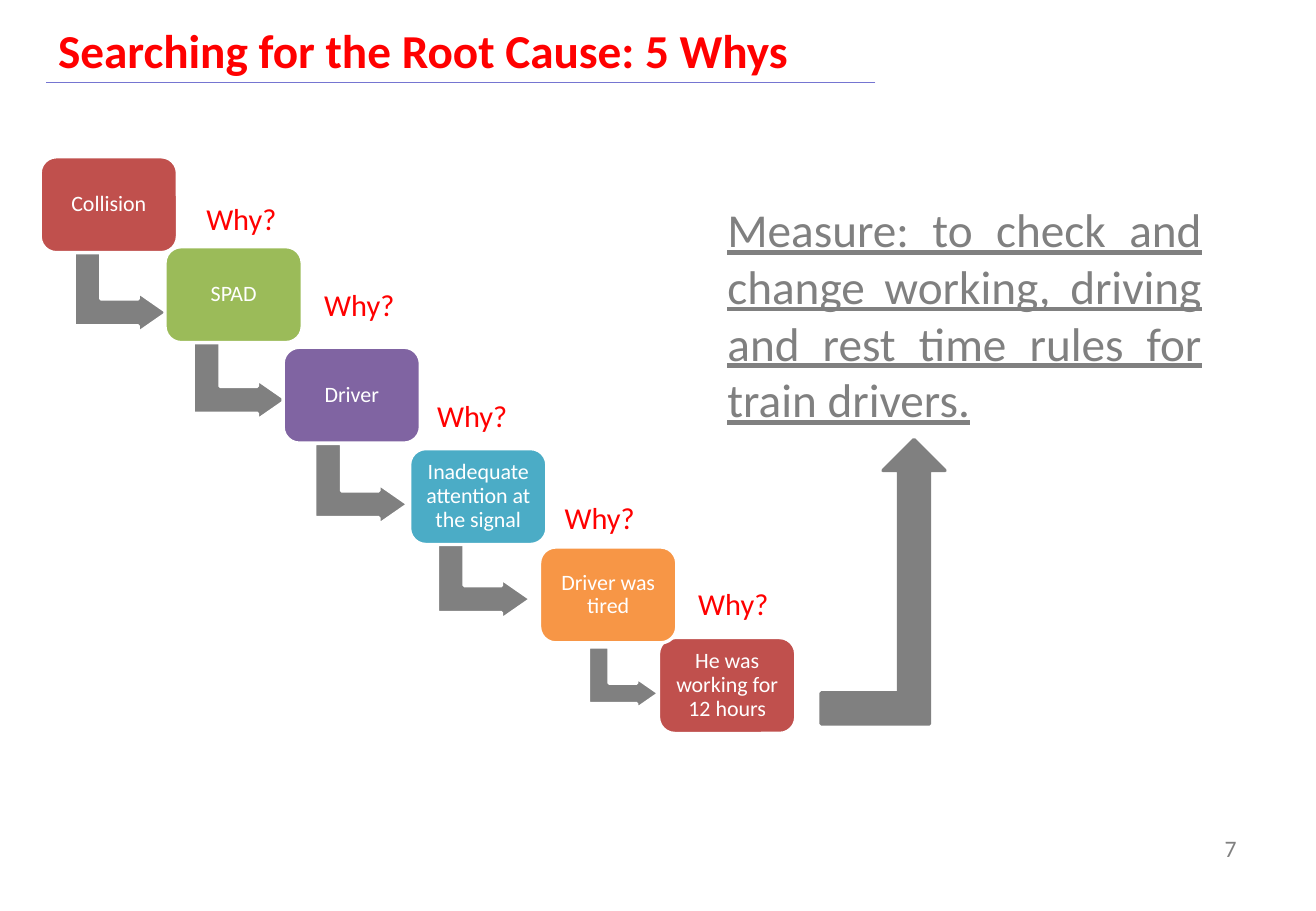
from typing import NamedTuple

from lxml.etree import SubElement
from pptx import Presentation
from pptx.dml.color import RGBColor
from pptx.enum.shapes import MSO_CONNECTOR, MSO_SHAPE
from pptx.enum.text import MSO_ANCHOR, MSO_AUTO_SIZE, PP_ALIGN
from pptx.oxml.ns import qn
from pptx.util import Pt

RED = RGBColor(0xFF, 0x00, 0x00)
GREY = RGBColor(0x80, 0x80, 0x80)
WHITE = RGBColor(0xFF, 0xFF, 0xFF)
RULE = RGBColor(0x75, 0x75, 0xD1)
BRICK = RGBColor(0xC0, 0x50, 0x4D)
GREEN = RGBColor(0x9B, 0xBB, 0x59)
PURPLE = RGBColor(0x80, 0x64, 0xA2)
TEAL = RGBColor(0x4B, 0xAC, 0xC6)
ORANGE = RGBColor(0xF7, 0x96, 0x46)

FONT = "Calibri"
STEP_W, STEP_H = 81.4, 56.9
BEND = (0.33, 0.25, 0.36)


class Box(NamedTuple):
    x: float
    y: float
    w: float
    h: float

    def inner(self, dx, dy, w, h):
        return Box(self.x + dx, self.y + dy, w, h)

    def points(self):
        return [Pt(n) for n in self]


STEPS = [
    ("Collision", BRICK, 0, 0),
    ("SPAD", GREEN, 74, 53.3),
    ("Driver", PURPLE, 144, 112.9),
    ("Inadequate attention at the signal", TEAL, 219, 173),
    ("He was working for 12 hours", BRICK, 366.5, 285),
    ("Driver was tired", ORANGE, 296, 231.3),
]
BENDS = [
    (23.7, 52.6, 48.2, 55.4),
    (94.3, 104.4, 48.2, 55.4),
    (166.3, 166.3, 48.2, 55.4),
    (239, 222.5, 48.2, 55.4),
    (327.6, 288, 36.7, 41.8),
]
WHYS = [(91.4, 22.3), (161.3, 73.4), (228.2, 139), (303.8, 199.4), (383, 250.6)]


def style(para, size, color, align=PP_ALIGN.LEFT):
    para.alignment = align
    font = para.font
    font.name = FONT
    font.size = Pt(size)
    font.color.rgb = color
    return font


def label(slide, box, text, size, color, align=PP_ALIGN.LEFT, grow=False):
    frame = slide.shapes.add_textbox(*box.points()).text_frame
    frame.word_wrap = True
    if grow:
        frame.auto_size = MSO_AUTO_SIZE.SHAPE_TO_FIT_TEXT
    frame.text = text
    return frame, style(frame.paragraphs[0], size, color, align)


def block(slide, kind, box, fill, edge, adjust=()):
    shape = slide.shapes.add_shape(kind, *box.points())
    shape.shadow.inherit = False
    shape.fill.solid()
    shape.fill.fore_color.rgb = fill
    shape.line.color.rgb = edge
    shape.line.width = Pt(2)
    for i, value in enumerate(adjust):
        shape.adjustments[i] = value
    return shape


def header(slide, box):
    frame, font = label(slide, box, "Searching for the Root Cause: 5 Whys", 28, RED)
    frame.vertical_anchor = MSO_ANCHOR.MIDDLE
    font.bold = True
    base = box.y + box.h
    line = slide.shapes.add_connector(
        MSO_CONNECTOR.STRAIGHT, Pt(box.x + box.w), Pt(base), Pt(box.x), Pt(base))
    line.line.color.rgb = RULE
    line.line.width = Pt(0.75)
    SubElement(line._element.spPr, qn("a:effectLst"))


def step(slide, box, text, fill):
    shape = block(slide, MSO_SHAPE.ROUNDED_RECTANGLE, box, fill, WHITE, (0.17,))
    frame = shape.text_frame
    frame.word_wrap = True
    frame.vertical_anchor = MSO_ANCHOR.MIDDLE
    frame.margin_left = frame.margin_right = Pt(3.6)
    frame.margin_top = frame.margin_bottom = Pt(3.6)
    frame.text = text
    para = frame.paragraphs[0]
    para.line_spacing = 0.9
    style(para, 13, WHITE, PP_ALIGN.CENTER)


def stairs(slide, box):
    for bend in BENDS:
        arrow = block(slide, MSO_SHAPE.BENT_UP_ARROW, box.inner(*bend), GREY, WHITE, BEND)
        arrow.rotation = 90
    for text, fill, dx, dy in STEPS:
        step(slide, box.inner(dx, dy, STEP_W, STEP_H), text, fill)
    for dx, dy in WHYS:
        label(slide, box.inner(dx, dy, 62.6, 28.8), "Why?", 18, RED, grow=True)


def measure(slide, box):
    text = ("Measure: to check and change working, driving and rest time "
            "rules for train drivers.")
    font = label(slide, box.inner(0, 0, box.w, 165), text, 28, GREY,
                 PP_ALIGN.JUSTIFY, grow=True)[1]
    font.underline = True
    block(slide, MSO_SHAPE.BENT_UP_ARROW,
          box.inner(62.6, 145.4, 73.4, box.h - 145.4), GREY, GREY)


def footer(slide, box):
    label(slide, box, "7", 14, GREY, PP_ALIGN.RIGHT)


def main():
    deck = Presentation()
    deck.slide_width, deck.slide_height = Pt(780), Pt(540)
    slide = deck.slides.add_slide(deck.slide_layouts[6])
    header(slide, Box(27.4, 9.4, 491.4, 39.6))
    footer(slide, Box(684.7, 491, 55.4, 39.6))
    stairs(slide, Box(23.8, 92.9, 447.9, 341.9))
    measure(slide, Box(424.1, 115.2, 295.2, 313.9))
    deck.save("out.pptx")


if __name__ == "__main__":
    main()
